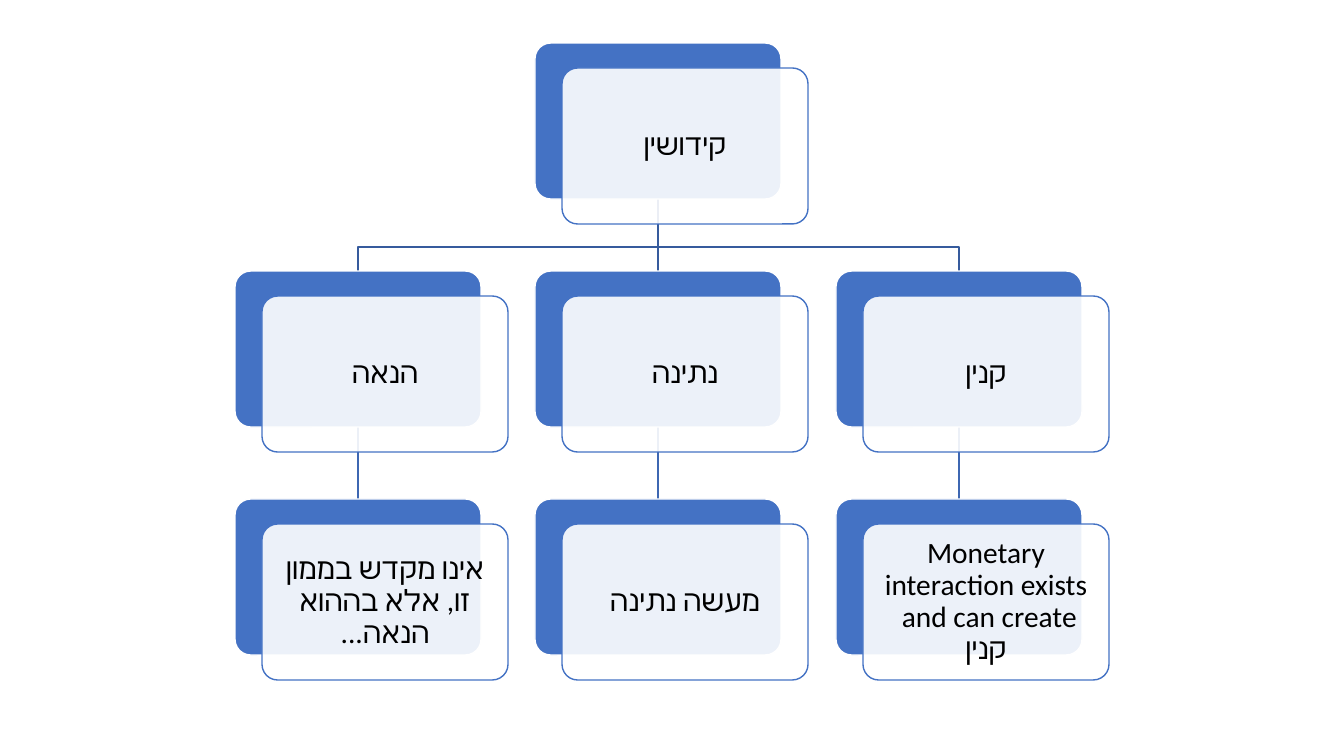
from lxml.etree import SubElement
from pptx import Presentation
from pptx.dml.color import RGBColor
from pptx.enum.shapes import MSO_CONNECTOR, MSO_SHAPE
from pptx.enum.text import MSO_ANCHOR, PP_ALIGN
from pptx.oxml.ns import qn
from pptx.util import Pt

ROOT = "קידושין"
BRANCHES = [
    ("הנאה", "אינו מקדש בממון זו, אלא בההוא הנאה..."),
    ("נתינה", "מעשה נתינה"),
    ("קנין", "Monetary interaction exists and can create \vקנין"),
]

COLORS = {
    "card": "4472C4",
    "panel": "FFFFFF",
    "text": "000000",
    "root link": "365B9D",
    "branch link": "3E67B2",
}
FONT = "Calibri"

# Lengths in px, 100.8 to the inch
SCALE = 914400 / 100.8
SLIDE_W, SLIDE_H = 1344, 756
COLUMNS = (235, 535, 836)
TOP, ROW_PITCH = 43, 228
CARD_W, CARD_H = 246, 156
PANEL_DX, PANEL_DY = 27, 25
LINK_BEND = 48
INSET = 9


def emu(*lengths):
    return [round(length * SCALE) for length in lengths]


def color(name):
    return RGBColor.from_string(COLORS[name])


def row_top(row):
    return TOP + row * ROW_PITCH


def center_x(column):
    return COLUMNS[column] + CARD_W // 2


def style_line(shape, name):
    shape.line.color.rgb = color(name)
    shape.line.width = Pt(1)


def add_link(slide, start_column, end_column, row, name):
    """Join a card in this row to the card below, bending if the column changes."""
    start_x, end_x = center_x(start_column), center_x(end_column)
    start_y, end_y = row_top(row) + CARD_H, row_top(row + 1)
    if start_x == end_x:
        link = slide.shapes.add_connector(
            MSO_CONNECTOR.STRAIGHT, *emu(start_x, start_y, end_x, end_y))
        SubElement(link._element.spPr, qn("a:effectLst"))
    else:
        bend_y = start_y + LINK_BEND
        outline = slide.shapes.build_freeform(start_x, start_y, scale=SCALE)
        outline.add_line_segments(
            [(start_x, bend_y), (end_x, bend_y), (end_x, end_y)], close=False)
        link = outline.convert_to_shape()
        link.fill.background()
        link.shadow.inherit = False
    style_line(link, name)


def add_box(slide, left, top, fill, line):
    box = slide.shapes.add_shape(
        MSO_SHAPE.ROUNDED_RECTANGLE, *emu(left, top, CARD_W, CARD_H))
    box.adjustments[0] = 0.1
    box.shadow.inherit = False
    box.fill.solid()
    box.fill.fore_color.rgb = color(fill)
    style_line(box, line)
    return box


def write(shape, text, size=21, fill="text", rtl=True):
    frame = shape.text_frame
    frame.word_wrap = True
    frame.vertical_anchor = MSO_ANCHOR.MIDDLE
    frame.margin_left, frame.margin_top, frame.margin_right, frame.margin_bottom = (
        emu(*[INSET] * 4))
    paragraph = frame.paragraphs[0]
    paragraph.text = text
    paragraph.alignment = PP_ALIGN.CENTER
    paragraph.line_spacing = 0.9
    paragraph._p.get_or_add_pPr().set("rtl", str(int(rtl)))
    for run in paragraph.runs:
        run.font.size = Pt(size)
        run.font.name = FONT
        run.font.color.rgb = color(fill)
        SubElement(run.font._element, qn("a:cs"), typeface=FONT)


def add_card(slide, column, row, text):
    """Solid card with a translucent text panel set off down and right."""
    left, top = COLUMNS[column], row_top(row)
    add_box(slide, left, top, "card", "panel")
    panel = add_box(slide, left + PANEL_DX, top + PANEL_DY, "panel", "card")
    panel_color = panel._element.spPr.find(qn("a:solidFill"))[0]
    SubElement(panel_color, qn("a:alpha"), val="90000")
    write(panel, text)


def main():
    deck = Presentation()
    deck.slide_width, deck.slide_height = emu(SLIDE_W, SLIDE_H)
    slide = deck.slides.add_slide(deck.slide_layouts[6])
    root_column = len(BRANCHES) // 2

    for column in range(len(BRANCHES)):
        add_link(slide, column, column, 1, "branch link")
        add_link(slide, root_column, column, 0, "root link")

    add_card(slide, root_column, 0, ROOT)
    for column, branch in enumerate(BRANCHES):
        for row, text in enumerate(branch, start=1):
            add_card(slide, column, row, text)

    deck.save("out.pptx")


if __name__ == "__main__":
    main()
